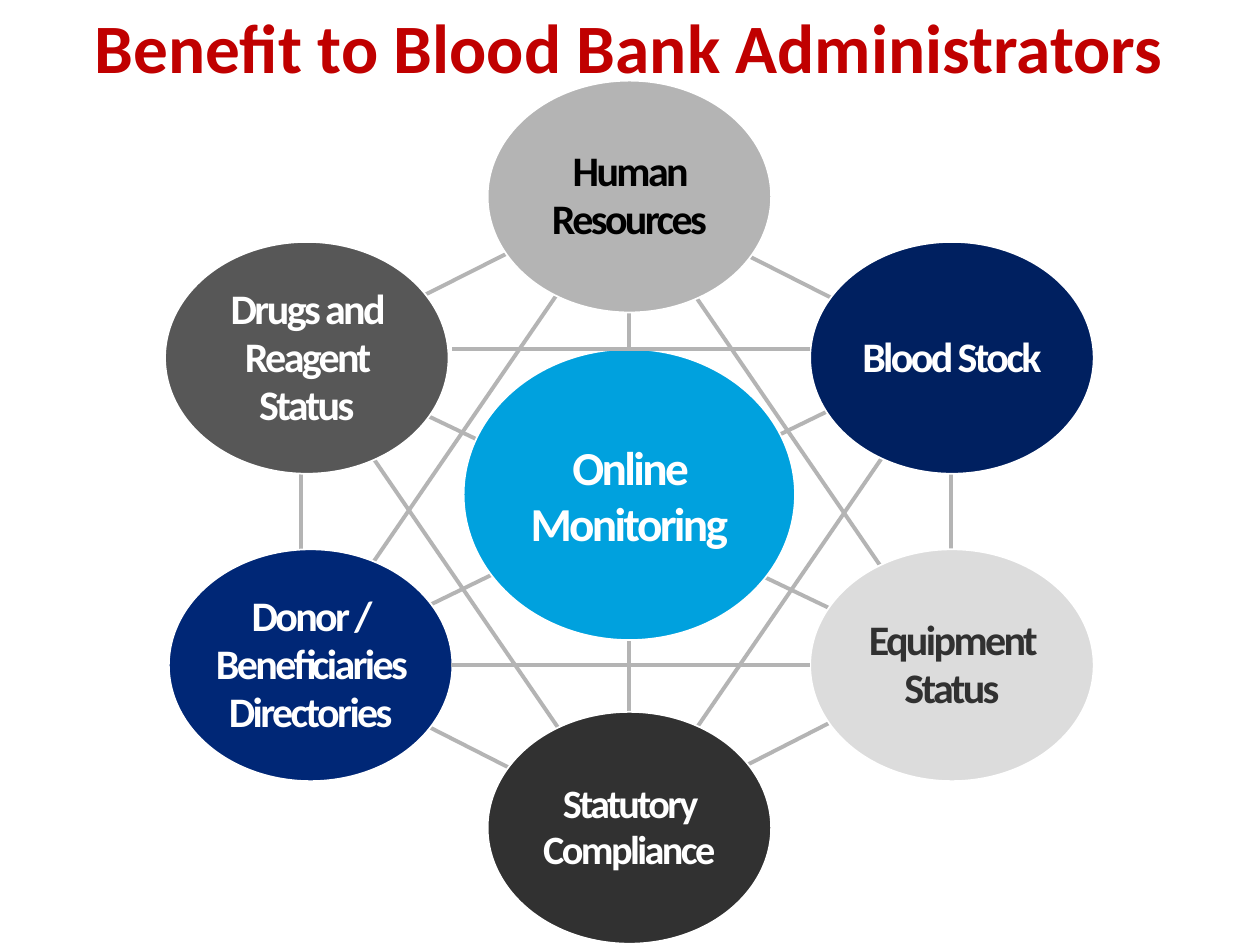
from lxml.etree import SubElement
from pptx import Presentation
from pptx.dml.color import RGBColor
from pptx.enum.shapes import MSO_CONNECTOR, MSO_SHAPE
from pptx.enum.text import MSO_ANCHOR, PP_ALIGN
from pptx.oxml.ns import qn
from pptx.util import Inches, Pt

COLUMNS, ROWS = 100, 75
SATELLITE = (22.5, 18.4)
HUB = (26.3, 23.1)


def color(hex_string):
    return RGBColor.from_string(hex_string)


class Diagram:
    """Holds the slide, its grid and the shared style; lengths are in columns and rows."""

    font = "Calibri"
    line_color = "B4B4B4"
    outline_color = "FFFFFF"
    letter_spacing = -1.5

    def __init__(self, presentation):
        self.column = presentation.slide_width / COLUMNS
        self.row = presentation.slide_height / ROWS
        self.slide = presentation.slides.add_slide(presentation.slide_layouts[5])

    def place(self, x, y):
        return round(x * self.column), round(y * self.row)

    def set_text(self, shape, text, size, text_color):
        frame = shape.text_frame
        frame.text = text
        frame.word_wrap = True
        frame.vertical_anchor = MSO_ANCHOR.MIDDLE
        paragraph = frame.paragraphs[0]
        paragraph.alignment = PP_ALIGN.CENTER
        font = paragraph.runs[0].font
        font.name, font.size, font.bold = self.font, Pt(size), True
        font.color.rgb = color(text_color)
        return paragraph

    def title(self, text, x, y, width, height):
        title = self.slide.shapes.title
        title.left, title.top = self.place(x, y)
        title.width, title.height = self.place(width, height)
        self.set_text(title, text, 39.6, "C00000")

    def line(self, start, end):
        connector = self.slide.shapes.add_connector(
            MSO_CONNECTOR.STRAIGHT, *self.place(*start), *self.place(*end))
        connector.line.color.rgb = color(self.line_color)
        connector.line.width = Pt(2.25)
        SubElement(connector._element.spPr, qn("a:effectLst"))

    def ellipse(self, text, center, extent, fill, text_color, size, line_spacing):
        (x, y), (width, height) = center, extent
        shape = self.slide.shapes.add_shape(
            MSO_SHAPE.OVAL, *self.place(x - width / 2, y - height / 2),
            *self.place(width, height))
        shape.shadow.inherit = False
        shape.fill.solid()
        shape.fill.fore_color.rgb = color(fill)
        shape.line.color.rgb = color(self.outline_color)
        shape.line.width = Pt(1)
        frame = shape.text_frame
        frame.margin_left = frame.margin_right = Inches(0.04)
        frame.margin_top = frame.margin_bottom = Inches(0.04)
        paragraph = self.set_text(shape, text, size, text_color)
        paragraph.line_spacing = line_spacing
        properties = paragraph.runs[0]._r.get_or_add_rPr()
        properties.set("spc", str(round(self.letter_spacing * 100)))


LINES_BEHIND = [
    # long diagonals between satellites
    ((49.9, 15.8), (74.6, 51.8)),
    ((49.4, 15.8), (24.7, 51.8)),
    ((24.5, 28.9), (49.2, 64.9)),
    ((75.1, 28.9), (50.4, 64.9)),
    # outer ring
    ((75.5, 28.5), (75.5, 48.7)),
    ((23.9, 28.5), (23.9, 48.7)),
    ((49.4, 15.5), (24.6, 28)),
    ((49.9, 15.5), (74.6, 28)),
    ((49.4, 65.5), (24.6, 52.9)),
    ((49.9, 65.5), (74.6, 52.9)),
    # lines through the hub
    ((24.7, 52.6), (74.8, 28.2)),
    ((75.3, 52.8), (23.9, 28.2)),
    ((49.9, 22), (49.9, 62.4)),
]

LINES_IN_FRONT = [
    ((35.8, 52.8), (64.3, 52.8)),
    ((35.9, 27.7), (64.3, 27.7)),
]

# text, center, extent, fill, text color, text size, line spacing
ELLIPSES = [
    ("Drugs and Reagent Status", (24.35, 28.4), SATELLITE, "575757", "FFFFFF", 24, 0.95),
    ("Blood Stock", (75.55, 28.4), SATELLITE, "002060", "FFFFFF", 24, 0.95),
    ("Equipment Status", (75.55, 52.8), SATELLITE, "DCDCDC", "313131", 24, 0.95),
    ("Donor / Beneficiaries Directories", (24.65, 52.8), SATELLITE,
     "002776", "FFFFFF", 24, 0.95),
    ("Online Monitoring", (49.95, 39.25), HUB, "00A1DE", "FFFFFF", 27, 1.0),
    ("Statutory Compliance", (49.95, 65.7), SATELLITE, "313131", "FFFFFF", 23, 0.95),
    ("Human Resources", (49.95, 15.6), SATELLITE, "B4B4B4", "000000", 24, 0.95),
]


def main():
    presentation = Presentation()
    presentation.slide_width, presentation.slide_height = Inches(10), Inches(7.5)
    diagram = Diagram(presentation)
    diagram.title("Benefit to Blood Bank Administrators", 4.5, 0.4, 90.8, 6.5)
    for start, end in LINES_BEHIND:
        diagram.line(start, end)
    for ellipse in ELLIPSES:
        diagram.ellipse(*ellipse)
    for start, end in LINES_IN_FRONT:
        diagram.line(start, end)
    presentation.save("out.pptx")


if __name__ == "__main__":
    main()
